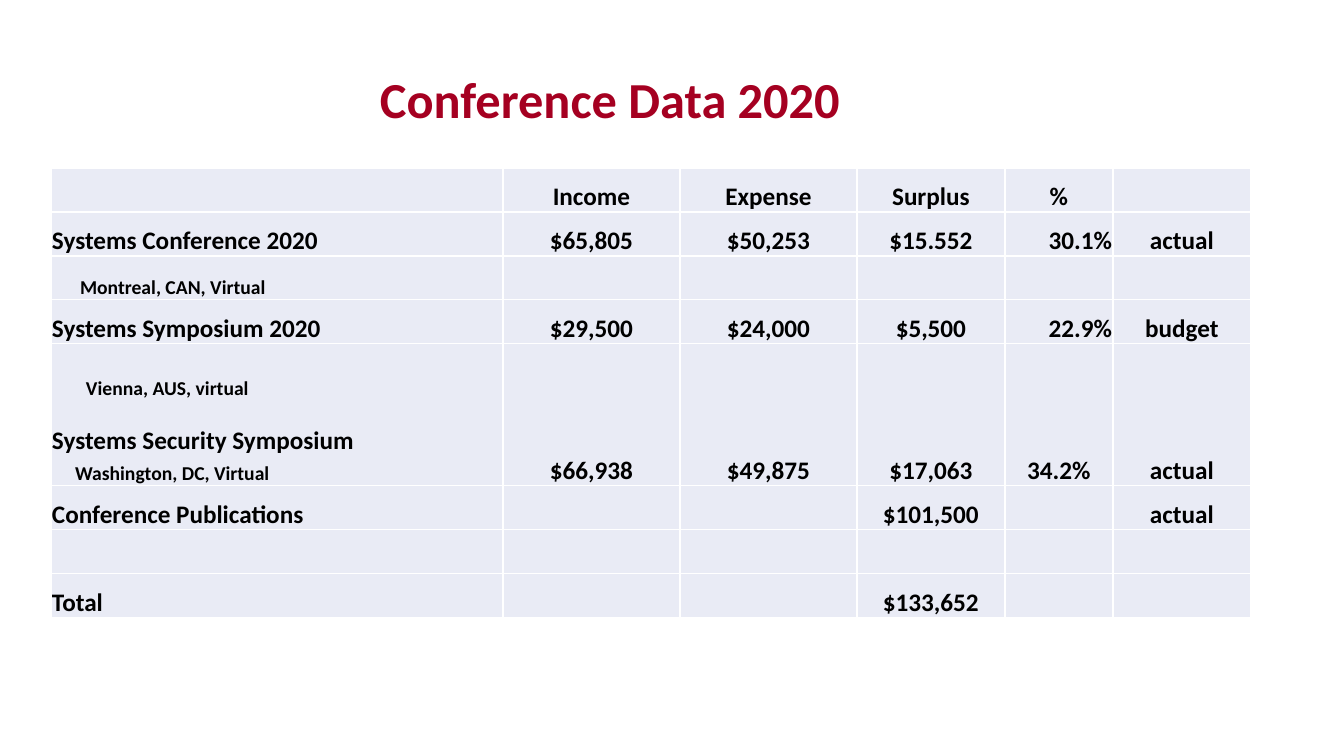
from lxml import etree
from pptx import Presentation
from pptx import util as u
from pptx.dml.color import RGBColor
from pptx.enum import text
from pptx.oxml.ns import qn

# Content: a first-column cell is a list of (wording, kind) lines
TITLE = "Conference Data 2020"
ROWS = [
    ([], "Income", "Expense", "Surplus", "%", ""),
    ([("Systems Conference 2020", "event")],
     "$65,805", "$50,253", "$15.552", "30.1%", "actual"),
    ([("Montreal, CAN, Virtual", "montreal")], "", "", "", "", ""),
    ([("Systems Symposium 2020", "event")],
     "$29,500", "$24,000", "$5,500", "22.9%", "budget"),
    ([("Vienna, AUS, virtual", "vienna"),
      ("Systems Security Symposium", "security"),
      ("Washington, DC, Virtual", "washington")],
     "$66,938", "$49,875", "$17,063", "34.2%", "actual"),
    ([("Conference Publications", "event")], "", "", "$101,500", "", "actual"),
    ([], "", "", "", "", ""),
    ([("Total", "event")], "", "", "$133,652", "", ""),
]
RIGHT_ALIGNED = {"30.1%", "22.9%"}

# Line kinds: size in pt, indent in px, space before in pt
KINDS = {
    "event": (18, 0, 0),
    "figure": (18, 0, 0),
    "montreal": (14, 28, 0),
    "vienna": (14, 34, 0),
    "security": (18, 0, 18),
    "washington": (14, 23, 4),
}

# Format
FONT = "Calibri"
CRIMSON = RGBColor(0xA5, 0x00, 0x21)
BLACK = RGBColor(0, 0, 0)
WHITE = RGBColor(0xFF, 0xFF, 0xFF)
PALE = RGBColor(0xE9, 0xEB, 0xF5)
COLUMN_WIDTHS = [452, 177, 177, 148, 108, 138]
ROW_HEIGHT, TALL_ROW_HEIGHT = 44, 142
CELL_FORMAT = {
    "margin_left": 1, "margin_right": 1, "margin_top": 1, "margin_bottom": 0,
}


def px(n):
    return u.Emu(round(n * 914400 / 100.8))


def style(font, size, color):
    values = {"name": FONT, "size": u.Pt(size), "bold": True}
    for name, value in values.items():
        setattr(font, name, value)
    font.color.rgb = color


def add_borders(cell):
    properties = cell._tc.get_or_add_tcPr()
    for side in ("lnL", "lnR", "lnT", "lnB"):
        line = etree.SubElement(properties, qn(f"a:{side}"), w=str(u.Pt(1)))
        solid = etree.SubElement(line, qn("a:solidFill"))
        etree.SubElement(solid, qn("a:srgbClr"), val=str(WHITE))


def write_line(paragraph, wording, kind, align):
    size, indent, before = KINDS[kind]
    paragraph.alignment = align
    if indent:
        properties = paragraph._p.get_or_add_pPr()
        properties.set("marL", str(px(indent)))
        properties.set("indent", "0")
    if before:
        paragraph.space_before = u.Pt(before)
    run = paragraph.add_run()
    run.text = wording
    style(run.font, size, BLACK)


def fill_cell(cell, lines, align):
    for name, value in CELL_FORMAT.items():
        setattr(cell, name, px(value))
    cell.vertical_anchor = text.MSO_ANCHOR.BOTTOM
    add_borders(cell)
    cell.fill.solid()
    cell.fill.fore_color.rgb = PALE
    frame = cell.text_frame
    for i, (wording, kind) in enumerate(lines):
        paragraph = frame.add_paragraph() if i else frame.paragraphs[0]
        write_line(paragraph, wording, kind, align)


def main():
    deck = Presentation()
    deck.slide_width, deck.slide_height = px(1344), px(756)
    slide = deck.slides.add_slide(deck.slide_layouts[6])

    # Title
    title = slide.shapes.add_textbox(px(370), px(70), px(907), px(126)).text_frame
    title.word_wrap = True
    heading = title.paragraphs[0]
    heading.line_spacing = 0.9
    run = heading.add_run()
    run.text = TITLE
    style(run.font, 36, CRIMSON)

    # Table grid: the row with several lines is the tall one
    heights = [TALL_ROW_HEIGHT if len(row[0]) > 1 else ROW_HEIGHT for row in ROWS]
    finances = slide.shapes.add_table(
        len(ROWS), len(COLUMN_WIDTHS), px(51), px(168),
        px(sum(COLUMN_WIDTHS)), px(sum(heights))).table
    finances.first_row = finances.horz_banding = False
    for column, width in zip(finances.columns, COLUMN_WIDTHS):
        column.width = px(width)
    for row, height in zip(finances.rows, heights):
        row.height = px(height)

    # Table cells
    for r, (events, *figures) in enumerate(ROWS):
        fill_cell(finances.cell(r, 0), events, text.PP_ALIGN.LEFT)
        for c, figure in enumerate(figures, 1):
            align = (text.PP_ALIGN.RIGHT if figure in RIGHT_ALIGNED
                     else text.PP_ALIGN.CENTER)
            lines = [(figure, "figure")] if figure else []
            fill_cell(finances.cell(r, c), lines, align)

    deck.save("out.pptx")


if __name__ == "__main__":
    main()
